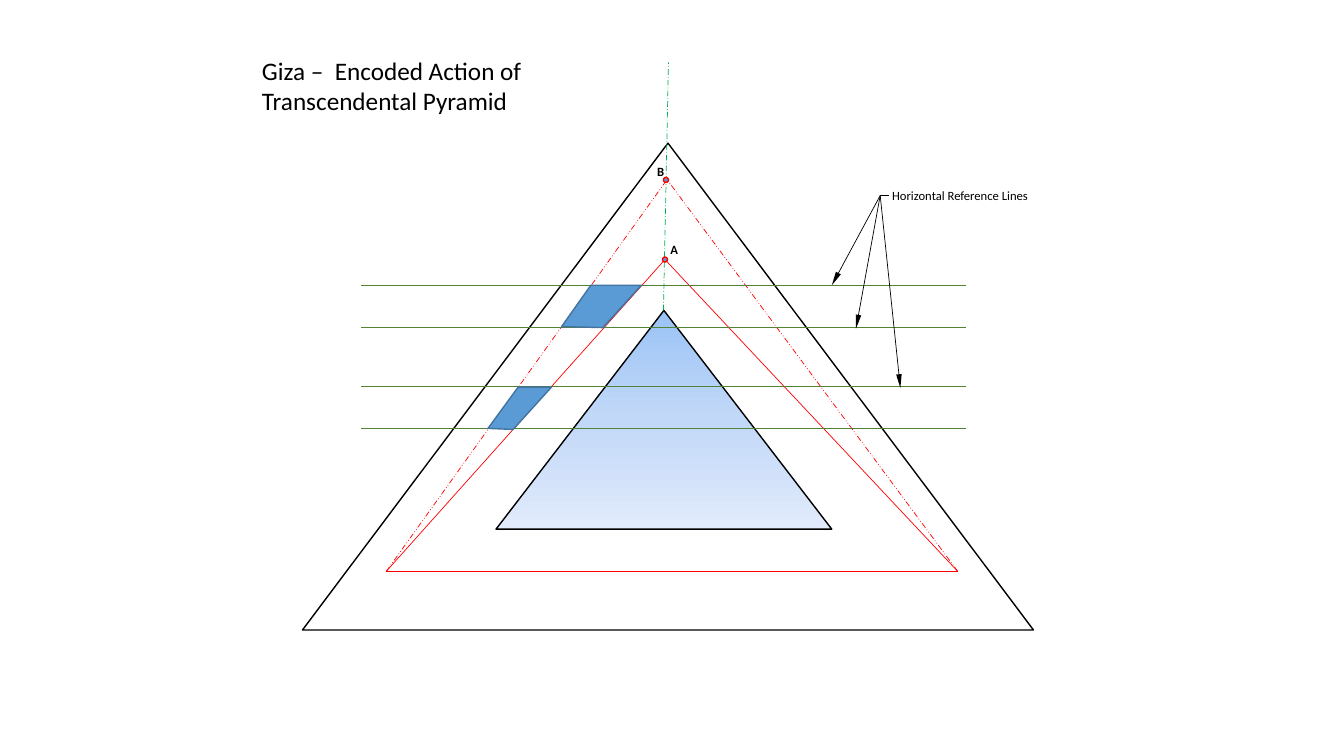
from copy import deepcopy
from dataclasses import dataclass

from lxml import etree
from pptx import Presentation
from pptx import util as u
from pptx.dml.color import RGBColor
from pptx.enum import dml, shapes, text
from pptx.oxml.ns import qn


@dataclass(frozen=True)
class Theme:
    font: str = "Calibri"
    black: str = "000000"
    red: str = "FF0000"
    axis: str = "00B050"
    level: str = "548235"
    block: str = "5B9BD5"
    block_edge: str = "43739E"
    glow: tuple = ("9AC3F5", "C2D8F8", "E1EBFB")
    title: int = 18
    label: int = 9
    thin: float = 0.5
    thick: float = 1


class Diagram:
    def __init__(self, page, theme):
        self.page = page
        self.theme = theme

    def finish(self, shape, fill, line):
        shape.shadow.inherit = False
        if fill is None:
            shape.fill.background()
        elif isinstance(fill, tuple):
            self.gradient(shape, fill)
        else:
            shape.fill.solid()
            shape.fill.fore_color.rgb = RGBColor.from_string(fill)
        shape.line.color.rgb = RGBColor.from_string(line)
        shape.line.width = u.Pt(self.theme.thick)

    def gradient(self, shape, colors):
        shape.fill.gradient()
        shape.fill.gradient_angle = 270
        stops = shape.element.spPr.find(qn("a:gradFill")).find(qn("a:gsLst"))
        stops.insert(1, deepcopy(stops[0]))
        for index, stop in enumerate(shape.fill.gradient_stops):
            stop.position = index / (len(colors) - 1)
            stop.color.rgb = RGBColor.from_string(colors[index])

    def preset(self, kind, left, top, width, height, fill, line):
        place = map(u.Inches, (left, top, width, height))
        self.finish(self.page.shapes.add_shape(kind, *place), fill, line)

    def outline(self, points, fill, line):
        corners = [(u.Inches(x), u.Inches(y)) for x, y in points]
        builder = self.page.shapes.build_freeform(*corners[0])
        builder.add_line_segments(corners[1:], close=True)
        self.finish(builder.convert_to_shape(), fill, line)

    def line(self, start, end, color, dash=None, arrow=False):
        ends = map(u.Inches, (*start, *end))
        line = self.page.shapes.add_connector(shapes.MSO_CONNECTOR.STRAIGHT, *ends)
        line.line.color.rgb = RGBColor.from_string(color)
        line.line.width = u.Pt(self.theme.thin)
        if dash:
            line.line.dash_style = dash
        if arrow:
            stroke = line.element.spPr.find(qn("a:ln"))
            etree.SubElement(stroke, qn("a:tailEnd"), type="triangle", w="sm", len="lg")
        etree.SubElement(line.element.spPr, qn("a:effectLst"))

    def text(self, words, left, top, width, height, size, bold=False, right=0.1):
        place = map(u.Inches, (left, top, width, height))
        box = self.page.shapes.add_textbox(*place)
        frame = {
            "word_wrap": True,
            "auto_size": text.MSO_AUTO_SIZE.SHAPE_TO_FIT_TEXT,
            "margin_right": u.Inches(right),
        }
        for name, value in frame.items():
            setattr(box.text_frame, name, value)
        span = box.text_frame.paragraphs[0].add_run()
        span.text = words
        for name, value in {"name": self.theme.font, "size": u.Pt(size), "bold": bold}.items():
            setattr(span.font, name, value)
        span.font.color.rgb = RGBColor.from_string(self.theme.black)


def main():
    deck = Presentation()
    deck.slide_width, deck.slide_height = u.Inches(13.33), u.Inches(7.5)
    theme = Theme()
    diagram = Diagram(deck.slides.add_slide(deck.slide_layouts[6]), theme)
    kinds = shapes.MSO_SHAPE
    dashes = dml.MSO_LINE

    diagram.preset(kinds.ISOSCELES_TRIANGLE, 3, 1.42, 7.25, 4.83, None, theme.black)
    diagram.preset(kinds.ISOSCELES_TRIANGLE, 4.92, 3.08, 3.33, 2.17, theme.glow, theme.black)

    base_left, base_right = (3.83, 5.67), (9.5, 5.67)
    diagram.line(base_left, (6.6, 2.57), theme.red)
    diagram.line(base_left, base_right, theme.red)
    diagram.line((6.6, 2.58), base_right, theme.red)
    diagram.line((6.58, 3.08), (6.63, 0.62), theme.axis, dashes.LONG_DASH_DOT)
    diagram.line(base_left, (6.61, 1.79), theme.red, dashes.DASH_DOT_DOT)
    for left, top in ((6.58, 1.76), (6.57, 2.55)):
        diagram.preset(kinds.OVAL, left, top, 0.05, 0.05, theme.block, theme.red)
    diagram.line(base_right, (6.63, 1.8), theme.red, dashes.DASH_DOT_DOT)

    bands = (
        (4.25, 3.83, ((4.84, 4.25), (5.14, 3.84), (5.47, 3.84), (5.09, 4.26))),
        (3.25, 2.83, ((5.57, 3.24), (5.86, 2.83), (6.36, 2.83), (5.98, 3.25))),
    )
    for lower, upper, corners in bands:
        for height in (lower, upper):
            diagram.line((3.58, height), (9.58, height), theme.level)
        diagram.outline(corners, theme.block, theme.block_edge)

    diagram.text("Horizontal Reference Lines", 8.75, 1.81, 1.83, 0.25, theme.label)
    hub = (8.73, 1.94)
    for target in ((8.25, 2.83), (8.49, 3.26), (8.93, 3.85)):
        diagram.line(hub, target, theme.black, arrow=True)
    diagram.line(hub, (8.82, 1.94), theme.black)

    for letter, left, top in (("A", 6.55, 2.35), ("B", 6.42, 1.58)):
        diagram.text(letter, left, top, 0.33, 0.25, theme.label, bold=True)
    title = "Giza –  Encoded Action of Transcendental Pyramid"
    diagram.text(title, 2.5, 0.5, 4.33, 0.71, theme.title, right=0.3)

    deck.save("out.pptx")


if __name__ == "__main__":
    main()
